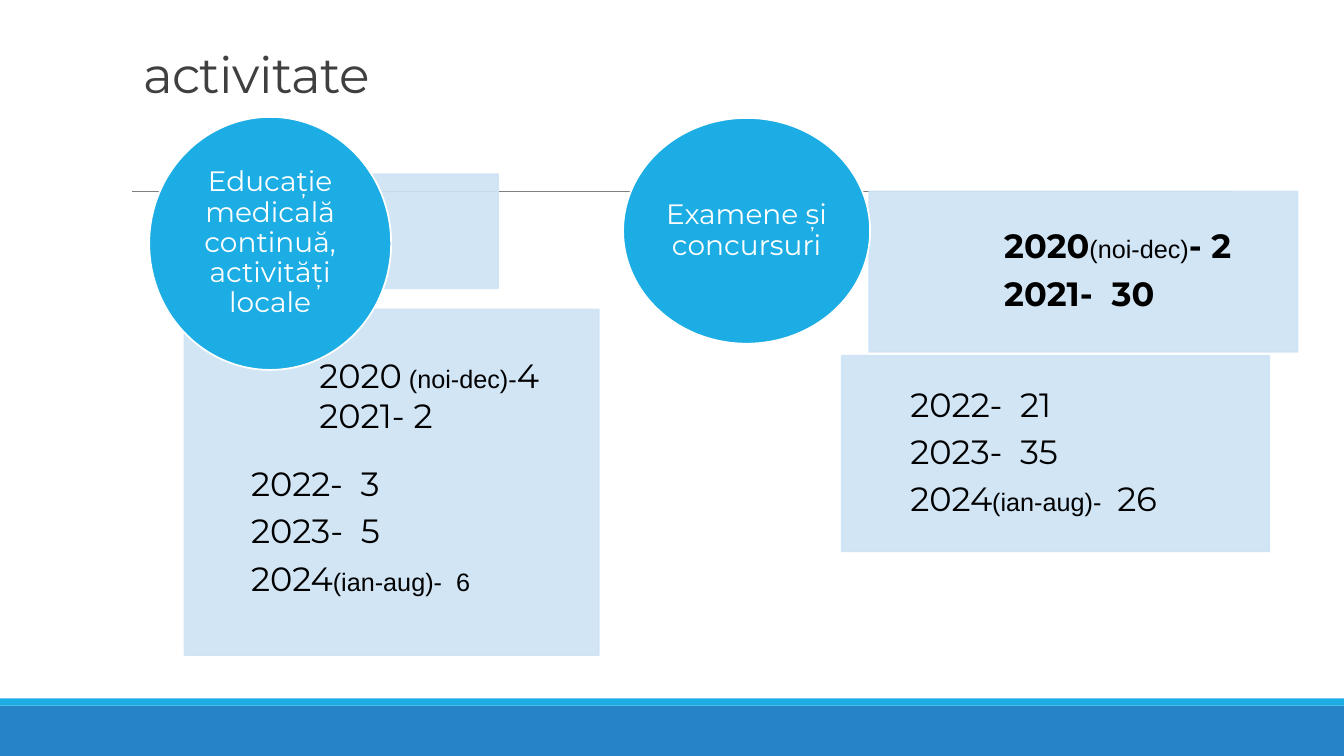
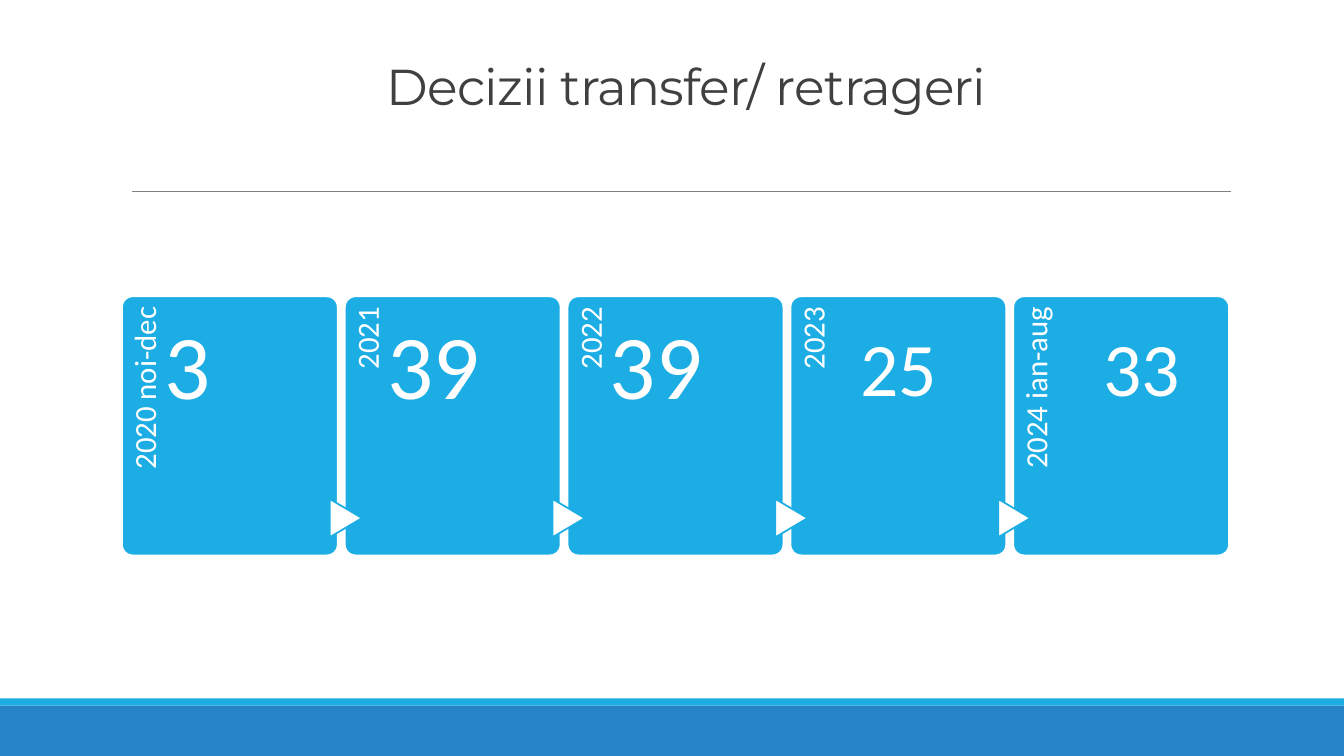
from lxml import etree
from pptx import Presentation
from pptx.dml.color import RGBColor
from pptx.enum.shapes import MSO_CONNECTOR, MSO_SHAPE
from pptx.enum.text import MSO_ANCHOR, PP_ALIGN
from pptx.oxml.ns import qn
from pptx.util import Inches, Pt

RECT, ELLIPSE = MSO_SHAPE.RECTANGLE, MSO_SHAPE.OVAL
CARD, ARROW = MSO_SHAPE.ROUNDED_RECTANGLE, MSO_SHAPE.FLOWCHART_EXTRACT
STRAIGHT = MSO_CONNECTOR.STRAIGHT
LEFT, CENTER, RIGHT = PP_ALIGN.LEFT, PP_ALIGN.CENTER, PP_ALIGN.RIGHT
TOP, MIDDLE, BOTTOM = MSO_ANCHOR.TOP, MSO_ANCHOR.MIDDLE, MSO_ANCHOR.BOTTOM

BLUE = RGBColor(0x26, 0x83, 0xC6)
CYAN = RGBColor(0x1C, 0xAD, 0xE4)
PALE = RGBColor(0xCD, 0xE3, 0xF5)
GRAY = RGBColor(0x80, 0x80, 0x80)
DARK = RGBColor(0x40, 0x40, 0x40)
BLACK = RGBColor(0, 0, 0)
WHITE = RGBColor(0xFF, 0xFF, 0xFF)
HEADING, BODY, NOTE = "Montserrat", "Calibri", "Arial"


def add_shape(s, kind, box, fill, line=None):
    sp = s.shapes.add_shape(kind, *map(Inches, box))
    sp.shadow.inherit = False
    sp.fill.solid()
    sp.fill.fore_color.rgb = fill
    if line is None:
        sp.line.fill.background()
    else:
        sp.line.color.rgb = line
        sp.line.width = Pt(1.25)
    return sp


def write(sp, lines, size, color, font=HEADING, align=LEFT, anchor=MIDDLE,
          spacing=0.9, after=0, insets=(0, 0, 0, 0), bold=False):
    """Fill a shape with lines, each a list of runs; every second run is a small note."""
    tf = sp.text_frame
    tf.word_wrap = True
    tf.vertical_anchor = anchor
    tf.margin_left, tf.margin_top, tf.margin_right, tf.margin_bottom = map(Inches, insets)
    for i, runs in enumerate(lines):
        p = tf.paragraphs[0] if i == 0 else tf.add_paragraph()
        p.alignment, p.line_spacing, p.space_after = align, spacing, Pt(after)
        p.font.name, p.font.size, p.font.bold = font, Pt(size), bold
        p.font.color.rgb = color
        for j, text in enumerate(runs):
            r = p.add_run()
            r.text = text
            if j % 2:
                r.font.name, r.font.size, r.font.bold = NOTE, Pt(18), False


prs = Presentation()
prs.slide_width, prs.slide_height = Inches(13.33), Inches(7.5)

# Shared look: bottom bands, rule and title
titles = [
    ("activitate", (1.32, 0.31, 10.88, 0.77), LEFT),
    ("Decizii transfer/ retrageri", (1.48, 0.31, 10.66, 0.89), CENTER),
]
slides = []
for title, box, align in titles:
    s = prs.slides.add_slide(prs.slide_layouts[6])
    add_shape(s, RECT, (0, 7, 13.33, 0.5), BLUE)
    add_shape(s, RECT, (0, 6.93, 13.33, 0.07), CYAN)
    rule = s.shapes.add_connector(STRAIGHT, Inches(1.31), Inches(1.9), Inches(12.21), Inches(1.9))
    rule.line.color.rgb = GRAY
    rule.line.width = Pt(0.5)
    etree.SubElement(rule._element.spPr, qn("a:effectLst"))
    sp = s.shapes.add_textbox(*map(Inches, box))
    write(sp, [[title]], 36, DARK, align=align, anchor=BOTTOM, spacing=0.85,
          insets=(0.1, 0.05, 0.1, 0.05))
    sp.text_frame.paragraphs[0].runs[0].font._element.set("spc", "-50")
    slides.append(s)
activity, transfers = slides

# Activity: pale panels with yearly counts, overlapped by topic circles
panels = [
    ((2.72, 1.73, 2.22, 1.13), [], 0, 0.19, False),
    ((1.83, 3.07, 4.11, 3.43),
     [["2022-  3"], ["2023-  5"], ["2024", "(ian-aug)-  6"]], 0.66, 1.19, False),
    ((8.62, 1.9, 4.25, 1.59),
     [["2020", "(noi-dec)", "- 2"], ["2021-  30"]], 1.34, 0.19, True),
    ((8.35, 3.53, 4.24, 1.94),
     [["2022-  21"], ["2023-  35"], ["2024", "(ian-aug)- ", " 26"]], 0.68, 0.19, False),
]
for box, lines, left, top, bold in panels:
    sp = add_shape(activity, RECT, box, PALE, PALE)
    for clr in sp._element.spPr.iter(qn("a:srgbClr")):
        etree.SubElement(clr, qn("a:alpha")).set("val", "90000")
    write(sp, lines, 24, BLACK, after=8, insets=(left, top, 0.19, 0.19), bold=bold)

topics = [
    ("Educație medicală continuă, activități locale", (1.48, 1.16, 2.4, 2.51)),
    ("Examene și concursuri", (6.18, 1.17, 2.45, 2.24)),
]
for topic, box in topics:
    sp = add_shape(activity, ELLIPSE, box, CYAN, WHITE)
    write(sp, [[topic]], 20, WHITE, align=CENTER, after=7)

sp = activity.shapes.add_textbox(Inches(3.07), Inches(3.47), Inches(2.6), Inches(0.91))
write(sp, [["2020", " (noi-dec)-", "4"], ["2021- 2"]], 24, BLACK, anchor=TOP, spacing=1,
      insets=(0.1, 0.05, 0.1, 0.05))

# Transfers: a row of year cards joined by arrows
CARD_LEFT, CARD_TOP, CARD_W, CARD_H, CARD_PITCH = 1.21, 2.94, 2.14, 2.57, 2.21
years = [
    ("2020 noi-dec", "3", 65, 0.42, 0.9),
    ("2021", "39", 65, 0.42, 0.9),
    ("2022", "39", 65, 0.42, 0.9),
    ("2023", "25", 54, 0.69, 1),
    ("2024 ian-aug", "33", 54, 0.89, 1),
]
for i, (year, count, size, offset, spacing) in enumerate(years):
    x = CARD_LEFT + i * CARD_PITCH
    sp = add_shape(transfers, CARD, (x, CARD_TOP, CARD_W, CARD_H), CYAN, WHITE)
    sp.adjustments[0] = 0.05

    sp = transfers.shapes.add_textbox(Inches(x - 0.84), Inches(3.77), Inches(2.1), Inches(0.43))
    sp.rotation = 270
    write(sp, [[year]], 22, WHITE, BODY, RIGHT, TOP, insets=(0, 0.08, 0.11, 0))

    if i:
        sp = add_shape(transfers, ARROW, (x - 0.18, 4.98, 0.38, 0.32), WHITE, CYAN)
        sp.rotation = 90

    sp = transfers.shapes.add_textbox(Inches(x + offset), Inches(3.18), Inches(1.25), Inches(1))
    write(sp, [[count]], size, WHITE, BODY, anchor=TOP, spacing=spacing)

prs.save("out.pptx")
